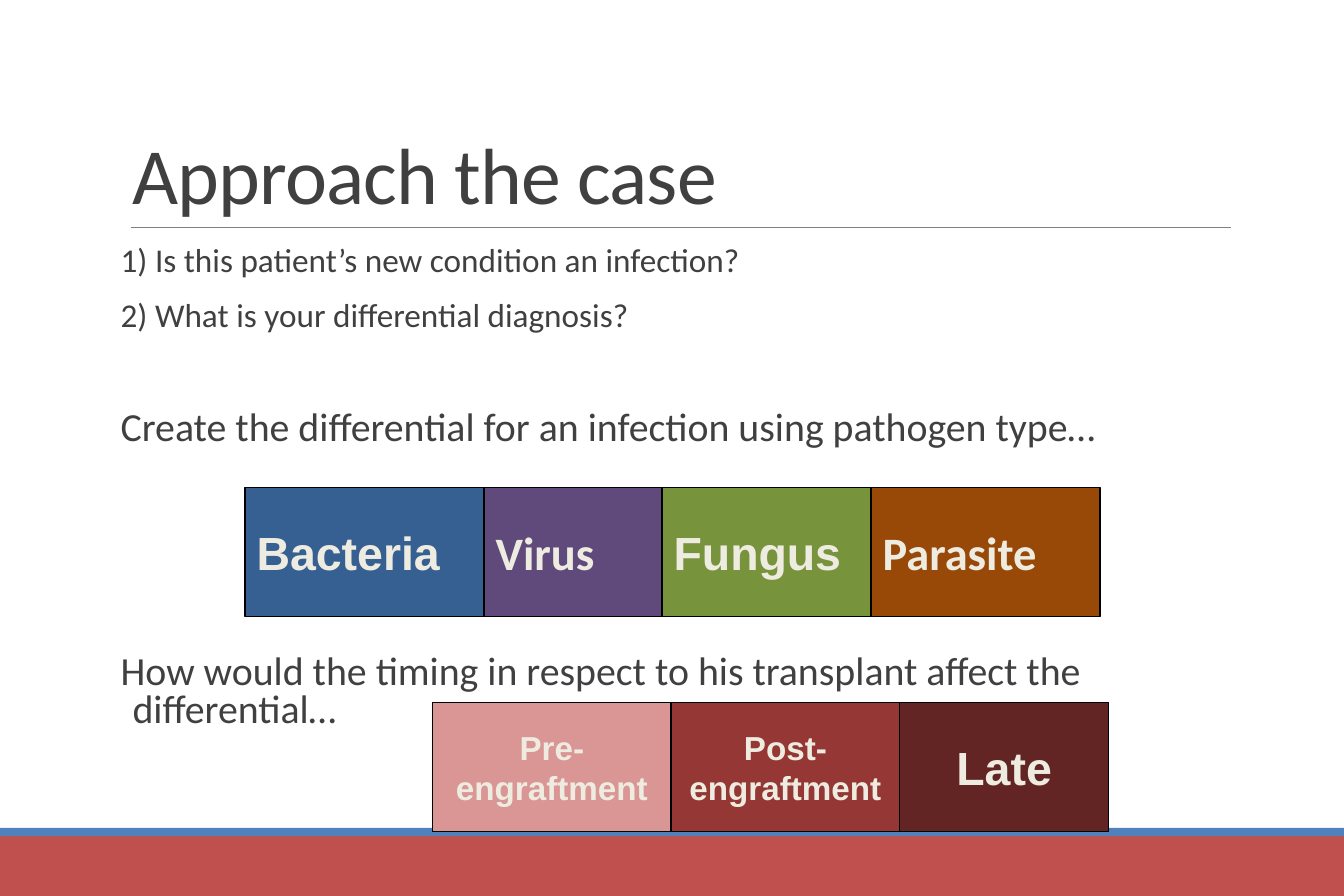
import pptx
import pptx.util
import pptx.dml.color
import pptx.enum.shapes
import pptx.enum.text
from lxml import etree

Inches, Pt = pptx.util.Inches, pptx.util.Pt
SHAPE = pptx.enum.shapes.MSO_SHAPE
ANCHOR = pptx.enum.text.MSO_ANCHOR
ALIGN = pptx.enum.text.PP_ALIGN

COLORS = {
    "band": "C0504D", "stripe": "4F81BD", "rule": "808080", "text": "404040",
    "label": "EEECE1", "outline": "000000",
    "bacteria": "376092", "virus": "604A7B", "fungus": "77933C", "parasite": "984807",
    "pre": "D99694", "post": "953735", "late": "632523",
}
COLORS = {name: pptx.dml.color.RGBColor.from_string(c) for name, c in COLORS.items()}


def add_box(left, top, width, height, fill):
    sp = s.shapes.add_shape(SHAPE.RECTANGLE, Inches(left), Inches(top),
                            Inches(width), Inches(height))
    sp.shadow.inherit = False
    sp.fill.solid()
    sp.fill.fore_color.rgb = COLORS[fill]
    sp.line.fill.background()
    return sp


def add_text(p, text, color, **font):
    r = p.add_run()
    r.text = text
    r.font.color.rgb = COLORS[color]
    for name, value in font.items():
        setattr(r.font, name, value)
    return r


prs = pptx.Presentation()
prs.slide_width, prs.slide_height = Inches(11.25), Inches(7.5)
s = prs.slides.add_slide(prs.slide_layouts[6])

# Footer bands and title rule
add_box(0, 7, 11.25, 0.5, "band")
add_box(0, 6.93, 11.25, 0.07, "stripe")
rule = s.shapes.add_connector(pptx.enum.shapes.MSO_CONNECTOR.STRAIGHT,
                              Inches(1.1), Inches(1.9), Inches(10.3), Inches(1.9))
rule.line.color.rgb = COLORS["rule"]
rule.line.width = Pt(0.5)
etree.SubElement(rule.element.spPr, pptx.oxml.ns.qn("a:effectLst"))

# Title
tf = s.shapes.add_textbox(Inches(1.01), Inches(0.31), Inches(9.28), Inches(1.59)).text_frame
tf.word_wrap = True
tf.vertical_anchor = ANCHOR.BOTTOM
p = tf.paragraphs[0]
p.line_spacing = 0.85
r = add_text(p, "Approach the case", "text", size=Pt(48), name="Calibri")
r.font._element.set("spc", "-50")

# Questions: text, size, space before
questions = [
    ("1) Is this patient’s new condition an infection?", 20, 12),
    ("2) What is your differential diagnosis?", 20, 12),
    ("Create the differential for an infection using pathogen type…", 24, 44),
    ("How would the timing in respect to his transplant affect the differential…", 24, 122),
]
tf = s.shapes.add_textbox(Inches(1.01), Inches(2.02), Inches(9.28), Inches(4.4)).text_frame
tf.word_wrap = True
tf.margin_left = tf.margin_right = 0
for i, (text, size, before) in enumerate(questions):
    p = tf.add_paragraph() if i else tf.paragraphs[0]
    for name, value in {"line_spacing": 0.8, "space_before": Pt(before),
                        "space_after": Pt(2)}.items():
        setattr(p, name, value)
    pPr = p._p.get_or_add_pPr()
    pPr.set("marL", str(Inches(0.1)))
    pPr.set("indent", str(-Inches(0.1)))
    add_text(p, text, "text", size=Pt(size), name="Calibri")

# Rows of adjoining boxes: label, width, fill, font, size
rows = [
    (2.05, 4.08, ALIGN.LEFT, [
        ("Bacteria", 2, "bacteria", "Arial", 28),
        ("Virus", 1.49, "virus", "Calibri", 28),
        ("Fungus", 1.75, "fungus", "Arial", 28),
        ("Parasite", 1.92, "parasite", "Calibri", 28)]),
    (3.62, 5.88, ALIGN.CENTER, [
        ("Pre-engraftment", 2, "pre", "Arial", 20),
        ("Post-engraftment", 1.91, "post", "Arial", 20),
        ("Late", 1.75, "late", "Arial", 28)]),
]
for left, top, align, boxes in rows:
    for label, width, fill, font, size in boxes:
        sp = add_box(left, top, width, 1.08, fill)
        sp.line.color.rgb = COLORS["outline"]
        sp.line.width = Pt(1)
        tf = sp.text_frame
        tf.word_wrap = True
        tf.vertical_anchor = ANCHOR.MIDDLE
        p = tf.paragraphs[0]
        p.alignment = align
        add_text(p, label, "label", size=Pt(size), name=font, bold=True)
        left += width

prs.save("out.pptx")
